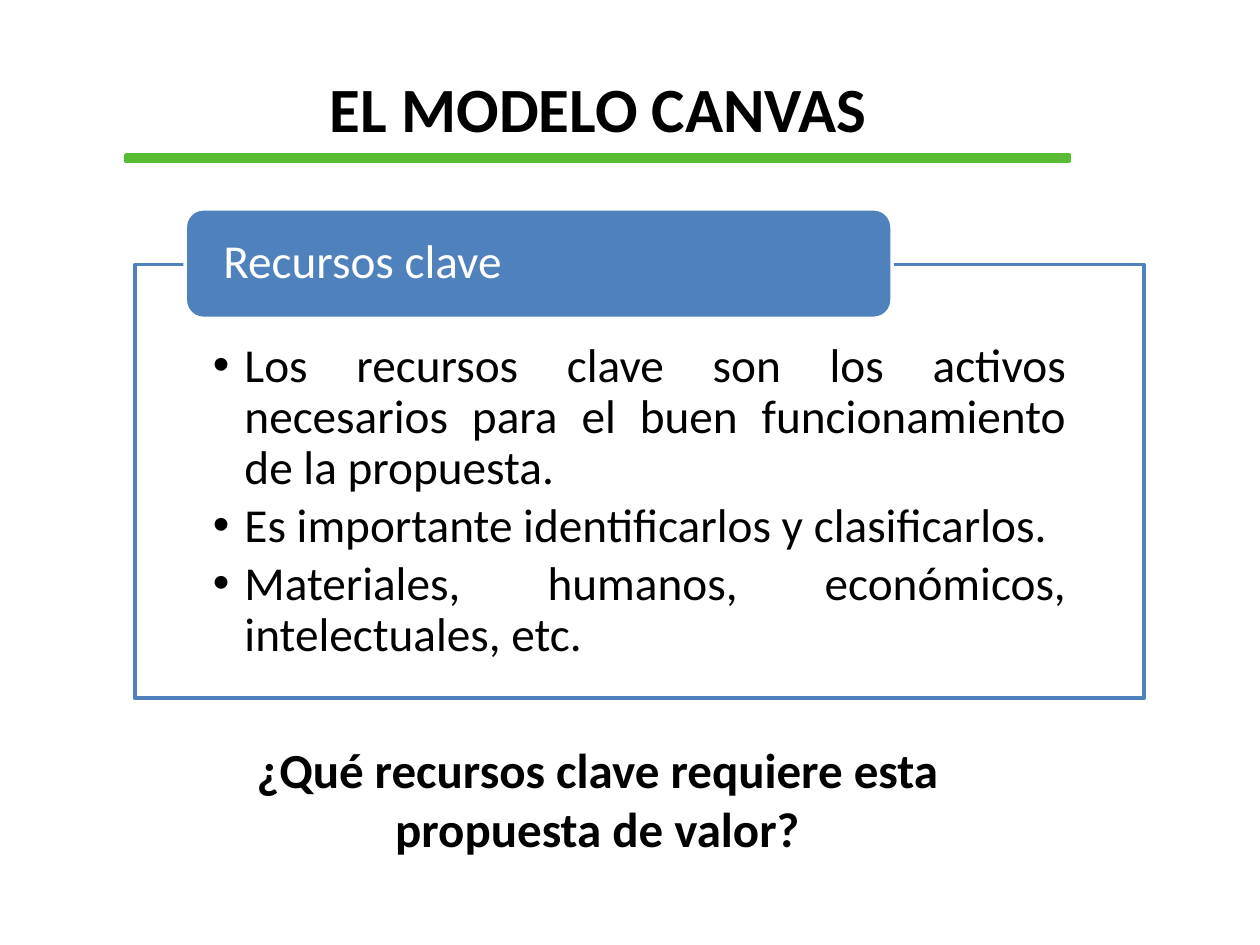
from lxml.etree import SubElement
from pptx import Presentation
from pptx.dml.color import RGBColor
from pptx.enum.shapes import MSO_SHAPE as Shape
from pptx.enum.text import MSO_ANCHOR as Anchor, MSO_AUTO_SIZE as AutoSize, PP_ALIGN as Align
from pptx.oxml.ns import qn
from pptx.util import Inches, Pt

WIDTH, HEIGHT = Inches(10), Inches(7.5)
FONT = "Calibri"
BLACK = RGBColor(0x00, 0x00, 0x00)
WHITE = RGBColor(0xFF, 0xFF, 0xFF)
GREEN = RGBColor(0x57, 0xBC, 0x32)
BLUE = RGBColor(0x4F, 0x81, 0xBD)

RESOURCES = [
    "Los recursos clave son los activos necesarios para el buen funcionamiento de la propuesta.",
    "Es importante identificarlos y clasificarlos.",
    "Materiales, humanos, económicos, intelectuales, etc.",
]


def share(left, top, width, height):
    """Turn shares of the slide's size into a position and size."""
    return (int(left * WIDTH), int(top * HEIGHT),
            int(width * WIDTH), int(height * HEIGHT))


def add_box(slide, kind, place, fill, line):
    shape = slide.shapes.add_shape(kind, *place)
    shape.shadow.inherit = False
    shape.fill.solid()
    shape.fill.fore_color.rgb = fill
    shape.line.color.rgb = line
    shape.line.width = Pt(2)
    return shape


def set_frame(frame, anchor, left=0.1, top=0.05, right=0.1, bottom=0.05):
    frame.word_wrap = True
    frame.auto_size = AutoSize.NONE
    frame.vertical_anchor = anchor
    frame.margin_left, frame.margin_right = Inches(left), Inches(right)
    frame.margin_top, frame.margin_bottom = Inches(top), Inches(bottom)


def format_paragraph(paragraph, size, align, color=BLACK, bold=False, spacing=1.0):
    paragraph.alignment = align
    paragraph.line_spacing = spacing
    font = paragraph.font
    font.name, font.size, font.bold = FONT, Pt(size), bold
    font.color.rgb = color


def add_bullet(paragraph):
    properties = paragraph._p.get_or_add_pPr()
    properties.set("marL", str(Inches(0.25)))
    properties.set("indent", str(-Inches(0.25)))
    SubElement(properties, qn("a:buFont"), typeface="Arial")
    SubElement(properties, qn("a:buChar"), char="•")


def add_title(slide, text):
    title = slide.shapes.title
    title.left, title.top, title.width, title.height = share(0.225, 0.067, 0.5, 0.095)
    title.text_frame.text = text
    set_frame(title.text_frame, Anchor.TOP)
    format_paragraph(title.text_frame.paragraphs[0], 36, Align.CENTER, bold=True)


def add_resource_list(slide, items):
    box = add_box(slide, Shape.RECTANGLE, share(0.107, 0.28, 0.801, 0.459), WHITE, BLUE)
    frame = box.text_frame
    set_frame(frame, Anchor.TOP, 0.62, 0.61, 0.62, 0.21)
    frame.text = "\n".join(items)
    for paragraph in frame.paragraphs:
        add_bullet(paragraph)
        paragraph.space_after = Pt(4)
        format_paragraph(paragraph, 27, Align.JUSTIFY, spacing=0.9)


def add_heading(slide, text):
    heading = add_box(slide, Shape.ROUNDED_RECTANGLE,
                      share(0.147, 0.221, 0.561, 0.116), BLUE, WHITE)
    set_frame(heading.text_frame, Anchor.MIDDLE, 0.26, 0, 0.26, 0)
    heading.text_frame.text = text
    format_paragraph(heading.text_frame.paragraphs[0], 27, Align.LEFT, WHITE, spacing=0.9)


def add_question(slide, text):
    frame = slide.shapes.add_textbox(*share(0.108, 0.776, 0.732, 0.139)).text_frame
    # Wider side margins break the question after "esta"
    set_frame(frame, Anchor.TOP)
    frame.text = text
    format_paragraph(frame.paragraphs[0], 28, Align.CENTER, bold=True)


def main():
    presentation = Presentation()
    presentation.slide_width, presentation.slide_height = WIDTH, HEIGHT
    slide = presentation.slides.add_slide(presentation.slide_layouts[5])

    # Title and the rule below it
    add_title(slide, "EL MODELO CANVAS")
    add_box(slide, Shape.RECTANGLE, share(0.1, 0.164, 0.749, 0.007), GREEN, GREEN)

    # Framed list with its heading on the top edge
    add_resource_list(slide, RESOURCES)
    add_heading(slide, "Recursos clave")

    # Closing question
    add_question(slide, "¿Qué recursos clave requiere esta propuesta de valor?")

    presentation.save("out.pptx")


if __name__ == "__main__":
    main()
